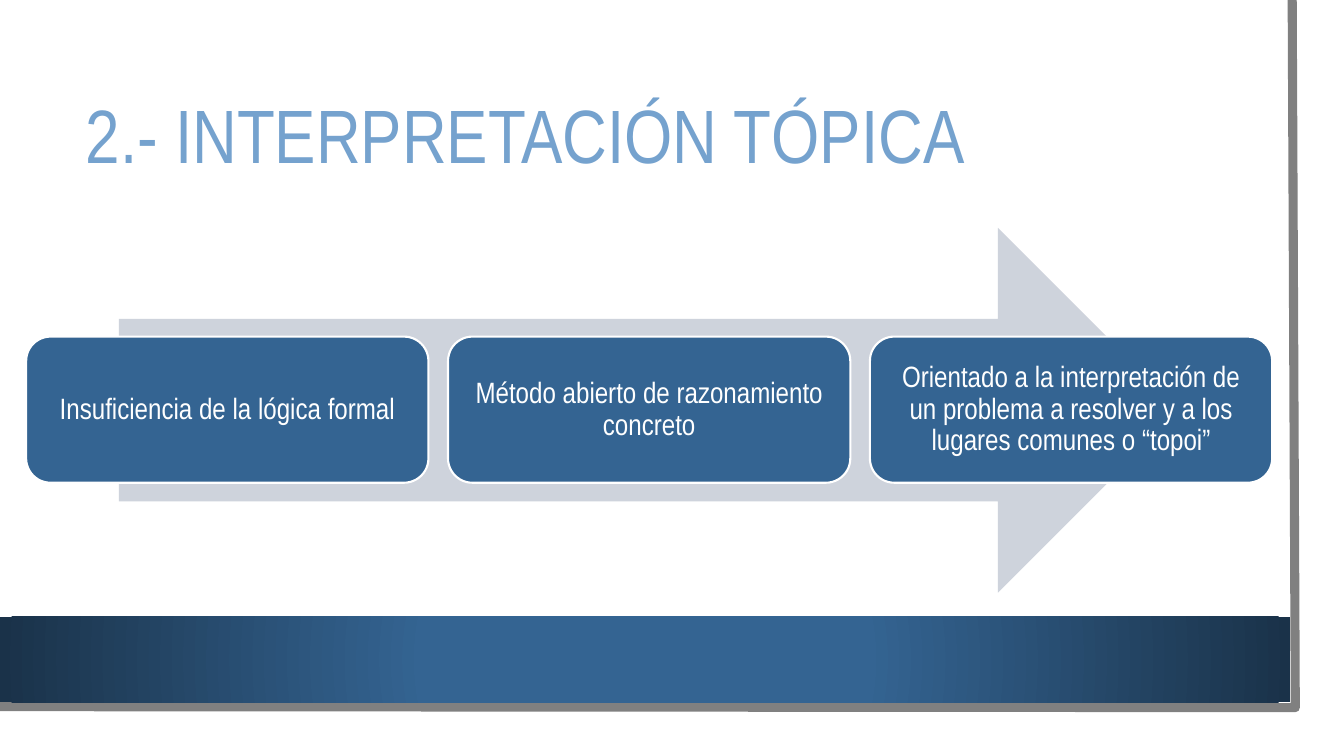
from dataclasses import dataclass

import lxml.etree
import pptx
import pptx.dml.color
import pptx.enum.shapes
import pptx.enum.text
import pptx.oxml
import pptx.oxml.ns
import pptx.presentation
import pptx.shapes.autoshape
import pptx.slide
import pptx.util

SHAPE = pptx.enum.shapes.MSO_SHAPE
ALIGN = pptx.enum.text.PP_ALIGN
SLIDE_WIDTH = pptx.util.Inches(13.33)
SLIDE_HEIGHT = pptx.util.Inches(7.5)


@dataclass(frozen=True)
class Theme:
    font: str = "Arial Narrow"
    title_size: float = 54
    step_size: float = 21
    frame_line: float = 6.5
    step_line: float = 1.5
    white: str = "FFFFFF"
    title: str = "75A2CE"
    step: str = "346492"
    band_edge: str = "1A3249"
    arrow: str = "CED3DC"
    frame: str = "808080"


@dataclass(frozen=True)
class Region:
    """Percentages of the slide's width and height."""

    left: float
    top: float
    width: float
    height: float

    def emu(self) -> tuple[int, int, int, int]:
        return (across(self.left), down(self.top), across(self.width), down(self.height))


@dataclass(frozen=True)
class Panel:
    kind: SHAPE
    region: Region
    fill: str
    border: str | None = None


THEME = Theme()
PAPER = Panel(SHAPE.RECTANGLE, Region(0, 0, 98.25, 96.93), THEME.white)
BAND = Panel(SHAPE.RECTANGLE, Region(0, 81.6, 96, 11.33), THEME.step)
ARROW = Panel(SHAPE.RIGHT_ARROW, Region(8.85, 30.13, 78.98, 48.27), THEME.arrow)
TITLE_REGION = Region(5.63, 10, 85.28, 16.8)
FRAME_CORNERS = ((96.15, 0), (96.38, 93.6), (-0.23, 93.47))
FIRST_STEP = Region(1.95, 44.53, 29.93, 19.33)
STEP_PITCH = 31.39
STEPS = (
    "Insuficiencia de la lógica formal",
    "Método abierto de razonamiento concreto",
    "Orientado a la interpretación de un problema a resolver y a los lugares comunes o “topoi”",
)


def across(percent: float) -> int:
    return round(SLIDE_WIDTH * percent / 100)


def down(percent: float) -> int:
    return round(SLIDE_HEIGHT * percent / 100)


def rgb(value: str) -> pptx.dml.color.RGBColor:
    return pptx.dml.color.RGBColor.from_string(value)


def draw_panel(slide: pptx.slide.Slide, panel: Panel) -> pptx.shapes.autoshape.Shape:
    drawn = slide.shapes.add_shape(panel.kind, *panel.region.emu())
    drawn.shadow.inherit = False
    drawn.fill.solid()
    drawn.fill.fore_color.rgb = rgb(panel.fill)
    if panel.border:
        drawn.line.color.rgb = rgb(panel.border)
        drawn.line.width = pptx.util.Pt(THEME.step_line)
    else:
        drawn.line.fill.background()
    return drawn


def draw_frame(slide: pptx.slide.Slide) -> None:
    start, *others = [(across(x), down(y)) for x, y in FRAME_CORNERS]
    builder = slide.shapes.build_freeform(*start)
    builder.add_line_segments(others, close=False)
    frame = builder.convert_to_shape()
    frame.shadow.inherit = False
    frame.fill.background()
    frame.line.color.rgb = rgb(THEME.frame)
    frame.line.width = pptx.util.Pt(THEME.frame_line)


def draw_band(slide: pptx.slide.Slide) -> None:
    band = draw_panel(slide, BAND)
    gradient = pptx.oxml.parse_xml(
        f'<a:gradFill {pptx.oxml.ns.nsdecls("a")} rotWithShape="1"><a:gsLst>'
        f'<a:gs pos="34000"><a:srgbClr val="{THEME.step}"/></a:gs>'
        f'<a:gs pos="100000"><a:srgbClr val="{THEME.band_edge}"/></a:gs></a:gsLst>'
        '<a:path path="circle"><a:fillToRect l="50000" t="50000" r="50000" b="50000"/>'
        "</a:path></a:gradFill>"
    )
    properties = band.element.spPr
    properties.replace(properties.find(pptx.oxml.ns.qn("a:solidFill")), gradient)


def write(
    target: pptx.shapes.autoshape.Shape, words: str, size: float, colour: str,
    align: ALIGN, margins: dict[str, int],
) -> None:
    frame = target.text_frame
    frame.text = words
    paragraph = frame.paragraphs[0]
    formats = {
        frame: {"word_wrap": True, "vertical_anchor": pptx.enum.text.MSO_ANCHOR.MIDDLE, **margins},
        paragraph: {"alignment": align, "line_spacing": 0.9},
        paragraph.runs[0].font: {"name": THEME.font, "size": pptx.util.Pt(size)},
    }
    for part, values in formats.items():
        for attribute, value in values.items():
            setattr(part, attribute, value)
    paragraph.runs[0].font.color.rgb = rgb(colour)


def draw_step(slide: pptx.slide.Slide, position: int, words: str) -> None:
    first = FIRST_STEP
    region = Region(first.left + position * STEP_PITCH, first.top, first.width, first.height)
    step = draw_panel(slide, Panel(SHAPE.ROUNDED_RECTANGLE, region, THEME.step, THEME.white))
    sides = ("left", "top", "right", "bottom")
    margins = {f"margin_{side}": across(0.68) for side in sides}
    write(step, words, THEME.step_size, THEME.white, ALIGN.CENTER, margins)


def main() -> None:
    deck = pptx.Presentation()
    deck.slide_width, deck.slide_height = SLIDE_WIDTH, SLIDE_HEIGHT
    slide = deck.slides.add_slide(deck.slide_layouts[6])
    draw_panel(slide, PAPER)
    draw_frame(slide)
    draw_band(slide)
    title = slide.shapes.add_textbox(*TITLE_REGION.emu())
    write(title, "2.- INTERPRETACIÓN TÓPICA", THEME.title_size, THEME.title, ALIGN.LEFT, {})
    draw_panel(slide, ARROW)
    for position, words in enumerate(STEPS):
        draw_step(slide, position, words)
    deck.save("out.pptx")


if __name__ == "__main__":
    main()
